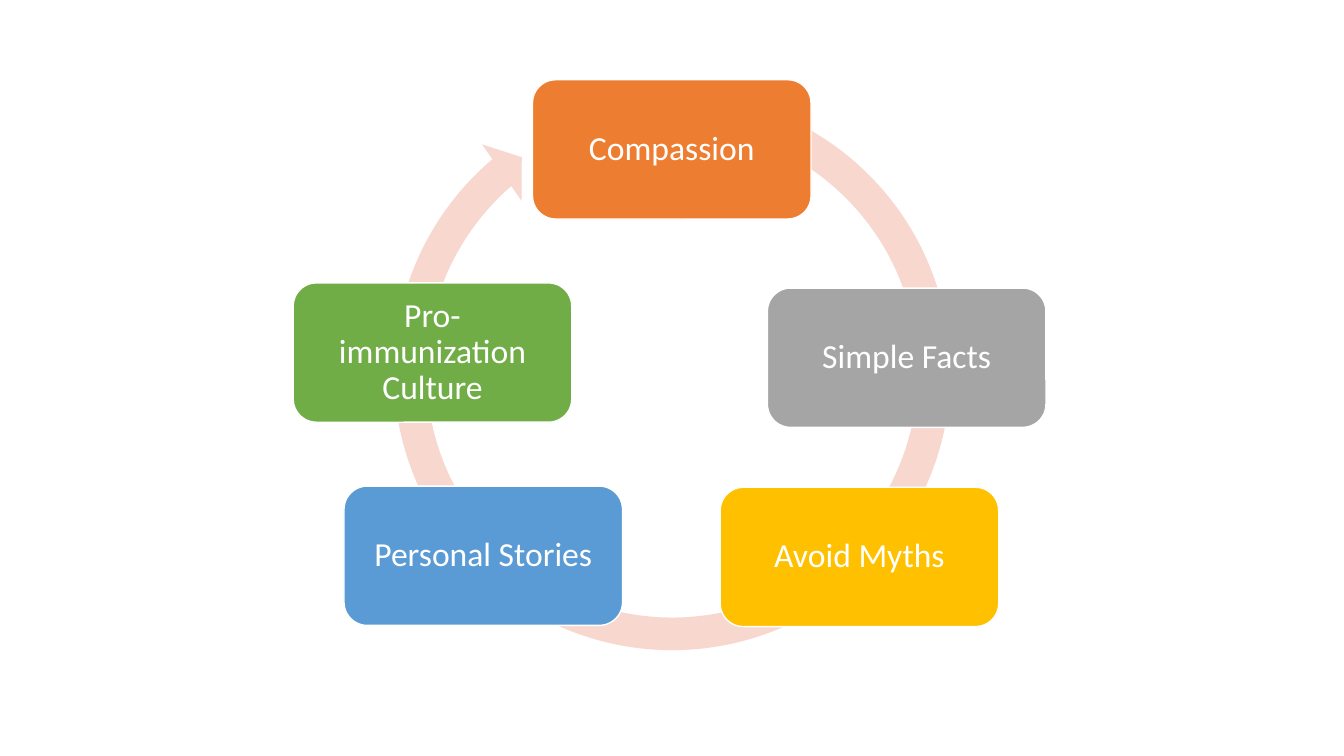
from pptx import Presentation
from pptx.dml.color import RGBColor
from pptx.enum.shapes import MSO_SHAPE
from pptx.enum.text import MSO_ANCHOR, PP_ALIGN
from pptx.util import Cm, Pt

# Content: label, fill, left and top in cm, clockwise from the top
STEPS = [
    ("Compassion", "ED7D31", 13.42, 2.01),
    ("Simple Facts", "A5A5A5", 19.34, 7.26),
    ("Avoid Myths", "FFC000", 18.15, 12.28),
    ("Personal Stories", "5B9BD5", 8.67, 12.25),
    ("Pro-immunization Culture", "70AD47", 7.39, 7.13),
]
WHITE = "FFFFFF"
BOX = (7.02, 3.51)
RING = (9.47, 1.9, 14.94, 14.94)
# Band width, head angle, end angle, start angle, head width
BEND = (0.055, 3.31, 137.68, 173.91, 0.058)


def paint(color, code):
    color.rgb = RGBColor.from_string(code)


def add(slide, kind, place, code):
    shape = slide.shapes.add_shape(kind, *map(Cm, place))
    shape.shadow.inherit = False
    shape.fill.solid()
    paint(shape.fill.fore_color, code)
    return shape


def label(shape, text):
    frame = shape.text_frame
    frame.word_wrap = True
    frame.vertical_anchor = MSO_ANCHOR.MIDDLE
    frame.margin_left = frame.margin_right = Cm(0.4)
    para = frame.paragraphs[0]
    para.alignment = PP_ALIGN.CENTER
    para.line_spacing = 0.9
    run = para.add_run()
    run.text = text
    run.font.name = "Calibri"
    run.font.size = Pt(24)
    paint(run.font.color, WHITE)


def main():
    deck = Presentation()
    deck.slide_width, deck.slide_height = Cm(33.87), Cm(19.05)
    slide = deck.slides.add_slide(deck.slide_layouts[6])

    # Ring arrow behind the boxes
    ring = add(slide, MSO_SHAPE.CIRCULAR_ARROW, RING, "F8D7CE")
    ring.line.fill.background()
    for i, value in enumerate(BEND):
        ring.adjustments[i] = value

    # Step boxes
    for text, code, left, top in STEPS:
        box = add(slide, MSO_SHAPE.ROUNDED_RECTANGLE, (left, top, *BOX), code)
        paint(box.line.color, WHITE)
        box.line.width = Pt(1)
        label(box, text)

    deck.save("out.pptx")


if __name__ == "__main__":
    main()
